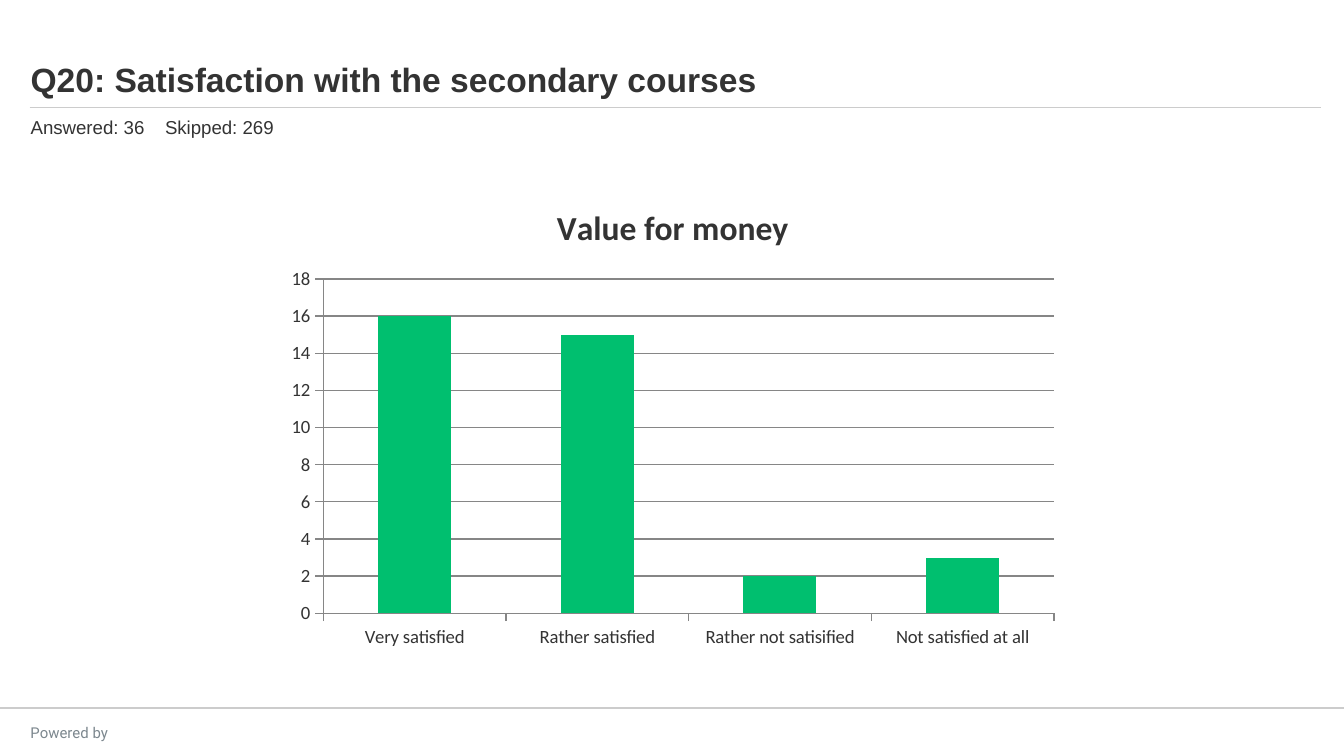
from typing import NamedTuple

from lxml import etree
from pptx import Presentation
from pptx.chart.data import CategoryChartData
from pptx.dml.color import RGBColor
from pptx.enum.chart import XL_CHART_TYPE, XL_TICK_MARK
from pptx.enum.shapes import MSO_CONNECTOR
from pptx.enum.text import MSO_ANCHOR, PP_ALIGN
from pptx.oxml.ns import qn
from pptx.util import Cm, Pt

COLUMN = XL_CHART_TYPE.COLUMN_CLUSTERED
OUT, NONE = XL_TICK_MARK.OUTSIDE, XL_TICK_MARK.NONE
STRAIGHT = MSO_CONNECTOR.STRAIGHT
TOP, BOTTOM = MSO_ANCHOR.TOP, MSO_ANCHOR.BOTTOM
LEFT, CENTER = PP_ALIGN.LEFT, PP_ALIGN.CENTER

INK, RULE, AXIS = "333333", "CCCCCC", "868686"
GREEN, GREY = "00BF6F", "7C878E"
WIDTH, HEIGHT = 25.4, 14.29


class Box(NamedTuple):
    left: float
    top: float
    width: float
    height: float

    def emu(self) -> list:
        return [Cm(side) for side in self]


class Rule(NamedTuple):
    left: float
    right: float
    top: float
    weight: float


RULES = [Rule(0, WIDTH, 13.39, 1), Rule(0.56, 24.97, 2.03, 0.5)]
RATINGS = {
    "Very satisfied": 16,
    "Rather satisfied": 15,
    "Rather not satisified": 2,
    "Not satisfied at all": 3,
}


def color(code: str) -> RGBColor:
    return RGBColor.from_string(code)


def style(font, size: float, face: str, ink: str = INK, bold: bool = False) -> None:
    font.size, font.name, font.bold = Pt(size), face, bold
    font.color.rgb = color(ink)


def add_text(slide, box: Box, text: str, *, size: float, face: str = "Arial",
             ink: str = INK, bold: bool = False, align=LEFT, anchor=TOP,
             tab: float = 0) -> None:
    """Add a one-paragraph text box; tab is a tab stop in cm."""
    frame = slide.shapes.add_textbox(*box.emu()).text_frame
    frame.word_wrap = True
    frame.vertical_anchor = anchor
    para = frame.paragraphs[0]
    para.alignment = align
    if tab:
        stops = etree.SubElement(para._p.get_or_add_pPr(), qn("a:tabLst"))
        etree.SubElement(stops, qn("a:tab"), pos=str(Cm(tab)), algn="l")
    run = para.add_run()
    run.text = text
    style(run.font, size, face, ink, bold)


def add_rule(slide, rule: Rule) -> None:
    line = slide.shapes.add_connector(
        STRAIGHT, Cm(rule.left), Cm(rule.top), Cm(rule.right), Cm(rule.top))
    line.line.color.rgb = color(RULE)
    line.line.width = Pt(rule.weight)
    etree.SubElement(line._element.spPr, qn("a:effectLst"))


def add_chart(slide, box: Box, title: str, values: dict[str, int]) -> None:
    data = CategoryChartData()
    data.categories = list(values)
    data.add_series("Series 1", list(values.values()))
    chart = slide.shapes.add_chart(COLUMN, *box.emu(), data).chart
    style(chart.font, 10, "Calibri")
    chart.has_legend = False

    head = chart.chart_title.text_frame
    head.text = title
    style(head.paragraphs[0].runs[0].font, 18, "Calibri", bold=True)
    chart.chart_title.include_in_layout = False

    plot = chart.plots[0]
    plot.gap_width = 150
    plot.vary_by_categories = False
    fill = plot.series[0].format.fill
    fill.solid()
    fill.fore_color.rgb = color(GREEN)

    scale = chart.value_axis
    scale.minimum_scale, scale.maximum_scale, scale.major_unit = 0, 18, 2
    scale.has_major_gridlines = True
    for axis in (chart.category_axis, scale):
        axis.major_tick_mark, axis.minor_tick_mark = OUT, NONE
    for part in (chart.category_axis, scale, scale.major_gridlines):
        part.format.line.color.rgb = color(AXIS)
        part.format.line.width = Pt(0.75)


def main() -> None:
    deck = Presentation()
    deck.slide_width, deck.slide_height = Cm(WIDTH), Cm(HEIGHT)
    slide = deck.slides.add_slide(deck.slide_layouts[6])
    for rule in RULES:
        add_rule(slide, rule)
    add_text(slide, Box(0, 13.56, 2.62, 0.46), "Powered by",
             size=8, face="Roboto", ink=GREY, align=CENTER)
    add_text(slide, Box(0.33, 0.91, 22.86, 1.09),
             "Q20: Satisfaction with the secondary courses",
             size=18, bold=True, anchor=BOTTOM)
    add_text(slide, Box(0.33, 2.06, 14.81, 0.69),
             "Answered: 36\tSkipped: 269", size=10, tab=2.54)
    add_chart(slide, Box(5.21, 3.43, 15.01, 8.99), "Value for money", RATINGS)
    deck.save("out.pptx")


if __name__ == "__main__":
    main()
